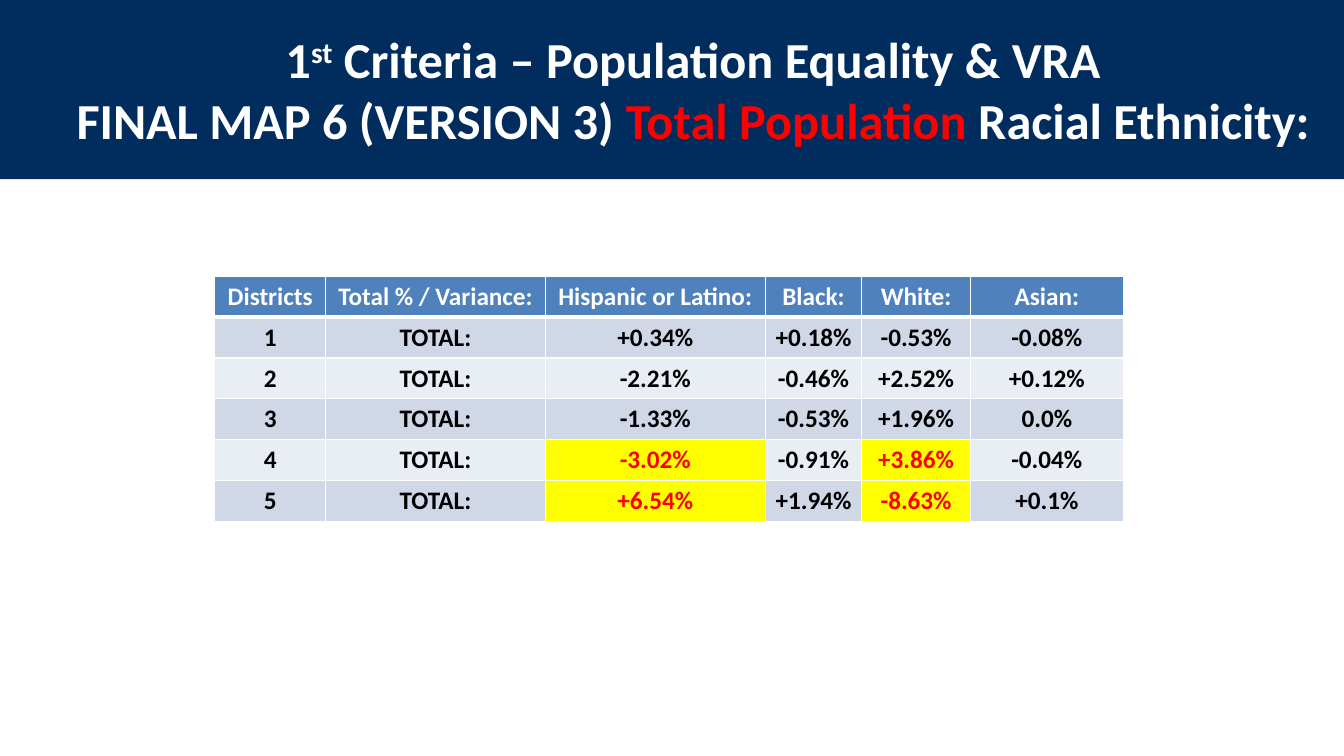
from pptx import Presentation
from pptx.dml.color import RGBColor
from pptx.enum.shapes import MSO_SHAPE
from pptx.enum.text import MSO_ANCHOR, MSO_AUTO_SIZE, PP_ALIGN
from pptx.oxml import parse_xml
from pptx.oxml.ns import nsdecls
from pptx.util import Pt

NAVY, BLUE, WHITE, BLACK = "002D5D", "4F81BD", "FFFFFF", "000000"
RED, YELLOW = "FF0000", "FFFF00"
BANDS = ("D0D8E8", "E9EDF4")
VARIANCE_LIMIT = 3

HEADINGS = ("Districts", "Total % / Variance:", "Hispanic or Latino:",
            "Black:", "White:", "Asian:")
VARIANCES = (
    ("+0.34%", "+0.18%", "-0.53%", "-0.08%"),
    ("-2.21%", "-0.46%", "+2.52%", "+0.12%"),
    ("-1.33%", "-0.53%", "+1.96%", "0.0%"),
    ("-3.02%", "-0.91%", "+3.86%", "-0.04%"),
    ("+6.54%", "+1.94%", "-8.63%", "+0.1%"),
)


def color(hex_value):
    return RGBColor.from_string(hex_value)


def add_text(paragraph, text, size=18, fill=BLACK, bold=True,
             font="Calibri", raised=False):
    paragraph.alignment = PP_ALIGN.CENTER
    run = paragraph.add_run()
    run.text = text
    run.font.name, run.font.size, run.font.bold = font, Pt(size), bold
    run.font.color.rgb = color(fill)
    if raised:
        run.font._element.set("baseline", "30000")


class CriteriaSlide:
    title_size = 36
    title_indent = 36

    def __init__(self, presentation):
        self.slide = presentation.slides.add_slide(presentation.slide_layouts[5])

    def band(self, left, top, width, height, fill):
        band = self.slide.shapes.add_shape(
            MSO_SHAPE.RECTANGLE, Pt(left), Pt(top), Pt(width), Pt(height))
        band.shadow.inherit = False
        band.fill.solid()
        band.fill.fore_color.rgb = color(fill)
        band.line.fill.background()

    def title(self, left, top, width, height, lines):
        title = self.slide.shapes.title
        title.left, title.top = Pt(left), Pt(top)
        title.width, title.height = Pt(width), Pt(height)
        # Bring the title in front of the band
        self.slide.shapes._spTree.append(title._element)
        frame = title.text_frame
        frame.word_wrap = True
        frame.auto_size = MSO_AUTO_SIZE.NONE
        frame.vertical_anchor = MSO_ANCHOR.TOP
        for number, pieces in enumerate(lines):
            paragraph = frame.add_paragraph() if number else frame.paragraphs[0]
            for text, style in pieces:
                add_text(paragraph, text, size=self.title_size,
                         **{"fill": WHITE, **style})
            properties = paragraph._p.get_or_add_pPr()
            properties.set("marL", str(Pt(self.title_indent)))
            properties.set("indent", "0")

    def cell(self, cell, text, fill, text_fill, top=1, bottom=1):
        for side, weight in (("L", 1), ("R", 1), ("T", top), ("B", bottom)):
            cell._tc.get_or_add_tcPr().append(parse_xml(
                f'<a:ln{side} {nsdecls("a")} w="{Pt(weight)}"><a:solidFill>'
                f'<a:srgbClr val="{WHITE}"/></a:solidFill></a:ln{side}>'))
        cell.fill.solid()
        cell.fill.fore_color.rgb = color(fill)
        add_text(cell.text_frame.paragraphs[0], text, fill=text_fill)

    def variance_table(self, left, top, widths, row_height):
        row_count = len(VARIANCES) + 1
        table = self.slide.shapes.add_table(
            row_count, len(widths), Pt(left), Pt(top),
            Pt(sum(widths)), Pt(row_height * row_count)).table
        for column, width in zip(table.columns, widths):
            column.width = Pt(width)
        for row in table.rows:
            row.height = Pt(row_height)
        # Heading row
        for column, heading in enumerate(HEADINGS):
            self.cell(table.cell(0, column), heading, BLUE, WHITE, bottom=3)
        # District rows, with variances over the limit highlighted
        for district, variances in enumerate(VARIANCES, start=1):
            shade = BANDS[(district - 1) % 2]
            for column, text in enumerate((str(district), "TOTAL:", *variances)):
                over = (text.endswith("%")
                        and abs(float(text.rstrip("%"))) > VARIANCE_LIMIT)
                self.cell(table.cell(district, column), text,
                          YELLOW if over else shade, RED if over else BLACK,
                          top=3 if district == 1 else 1)


def main():
    presentation = Presentation()
    presentation.slide_width, presentation.slide_height = Pt(960), Pt(540)
    criteria = CriteriaSlide(presentation)

    # Heading band and title
    criteria.band(0, -2, 960, 130, NAVY)
    criteria.title(5, 16.5, 944.5, 147.5, (
        (("1", {}), ("st", {"raised": True}),
         (" Criteria – Population Equality & VRA", {})),
        (("FINAL MAP 6 (VERSION 3) ", {}), ("Total Population ", {"fill": RED}),
         ("Racial Ethnicity:", {})),
    ))

    # Population variance by district
    criteria.variance_table(153.4, 197.3, (79.2, 157, 157, 69, 77.6, 109.2), 29.2)

    presentation.save("out.pptx")


if __name__ == "__main__":
    main()
